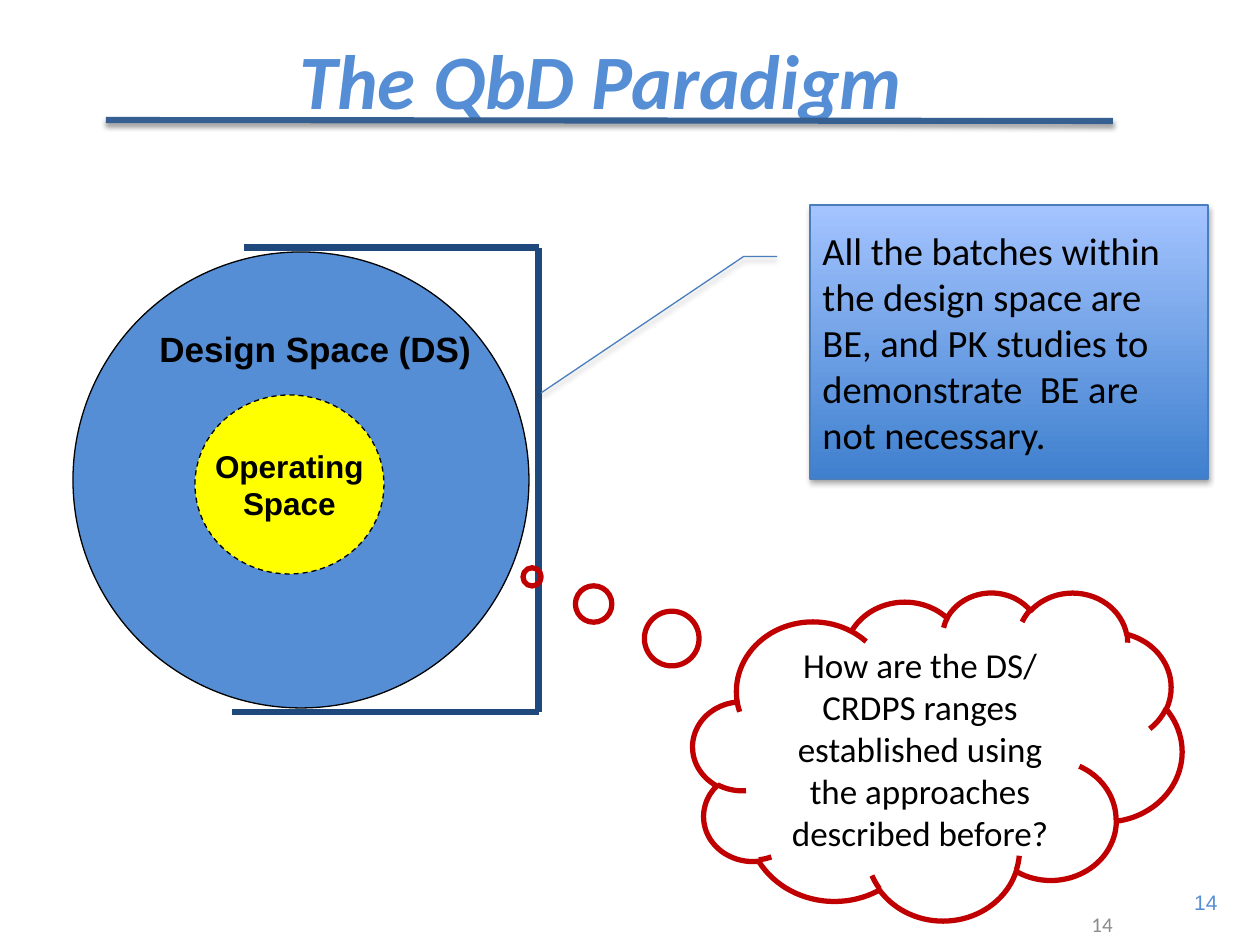
from lxml.etree import SubElement
from pptx import Presentation
from pptx.dml.color import RGBColor
from pptx.enum.dml import MSO_LINE
from pptx.enum.shapes import MSO_CONNECTOR, MSO_SHAPE
from pptx.enum.text import MSO_ANCHOR, MSO_AUTO_SIZE, PP_ALIGN
from pptx.oxml.ns import qn
from pptx.util import Emu, Pt

SCALE = 914400 / 126
COLORS = {
    "blue": "558ED5",
    "navy": "1F497D",
    "rule": "376092",
    "edge": "4B7EBC",
    "deep": "3F80CE",
    "pale": "A4C4FF",
    "yellow": "FFFF00",
    "red": "C00000",
    "black": "000000",
    "gray": "8C8C8C",
}


def px(*sizes):
    return [Emu(round(size * SCALE)) for size in sizes]


def color(name):
    return RGBColor.from_string(COLORS[name])


def set_line(item, name, width):
    item.line.color.rgb = color(name)
    item.line.width = Pt(width)


def set_shadow(item, alpha=0, blur=0, dist=0):
    props = item._element.spPr
    effects = props.find(qn("a:effectLst"))
    if effects is None:
        effects = SubElement(props, qn("a:effectLst"))
    if alpha:
        outer = SubElement(effects, qn("a:outerShdw"), blurRad=str(Pt(blur)),
                           dist=str(Pt(dist)), dir="5400000", rotWithShape="0")
        tint = SubElement(outer, qn("a:srgbClr"), val=COLORS["black"])
        SubElement(tint, qn("a:alpha"), val=str(alpha * 1000))


def set_text(shape, lines, size, face="Calibri", ink="black", align=PP_ALIGN.CENTER,
             anchor=MSO_ANCHOR.MIDDLE, wrap=True, bold=False, italic=False):
    frame = shape.text_frame
    frame.text = lines
    frame.word_wrap = wrap
    frame.vertical_anchor = anchor
    for para in frame.paragraphs:
        para.alignment = align
        font = para.font
        font.name = face
        font.size = Pt(size)
        font.bold = bold
        font.italic = italic
        font.color.rgb = color(ink)


def add_title(slide, text, box):
    title = slide.shapes.title
    title.left, title.top, title.width, title.height = px(*box)
    set_text(title, text, 44, ink="blue", bold=True, italic=True)


def add_label(slide, text, box, size, grow=False, **style):
    label = slide.shapes.add_textbox(*px(*box))
    if grow:
        label.text_frame.auto_size = MSO_AUTO_SIZE.SHAPE_TO_FIT_TEXT
        style.update(wrap=False, anchor=MSO_ANCHOR.TOP)
    set_text(label, text, size, **style)


def add_line(slide, start, end, name, width):
    line = slide.shapes.add_connector(MSO_CONNECTOR.STRAIGHT, *px(*start, *end))
    set_line(line, name, width)
    set_shadow(line)
    return line


def add_shape(slide, kind, box, edge, width, fill=None, adjust=()):
    shape = slide.shapes.add_shape(kind, *px(*box))
    shape.shadow.inherit = False
    for index, value in enumerate(adjust):
        shape.adjustments[index] = value
    if fill:
        shape.fill.solid()
        shape.fill.fore_color.rgb = color(fill)
    else:
        shape.fill.background()
    set_line(shape, edge, width)
    return shape


def add_bracket(slide):
    right, top, base = 539, 248, 712
    points = [(244, top), (right, top), (right, base), (232, base)]
    for start, end in zip(points, points[1:]):
        add_line(slide, start, end, "navy", 4)


def add_spaces(slide):
    add_shape(slide, MSO_SHAPE.OVAL, (73, 252, 456, 456), "black", 0.75, "blue")
    add_label(slide, "Design Space (DS)", (147, 321, 340, 55), 20, grow=True,
              face="Arial", align=PP_ALIGN.LEFT, bold=True)
    inner = add_shape(slide, MSO_SHAPE.OVAL, (195, 395, 189, 179), "black", 0.75, "yellow")
    inner.line.dash_style = MSO_LINE.DASH
    set_text(inner, "Operating\nSpace", 18, face="Arial", wrap=False, bold=True)


def add_cloud(slide):
    cloud = add_shape(slide, MSO_SHAPE.CLOUD_CALLOUT, (693, 592, 489, 328), "red", 3,
                      adjust=(-0.829, -0.546))
    set_text(cloud, "How are the DS/ CRDPS ranges established using "
             "the approaches described before?", 20)


def add_callout(slide):
    note = add_shape(slide, MSO_SHAPE.LINE_CALLOUT_2, (810, 205, 398, 274), "edge", 0.75,
                     adjust=(0.188, -0.083, 0.188, -0.167, 0.686, -0.676))
    note.fill.gradient()
    note.fill.gradient_angle = 90
    for stop, name in zip(note.fill.gradient_stops, ("deep", "pale")):
        stop.color.rgb = color(name)
    set_shadow(note, 35, 3.1, 1.8)
    set_text(note, "All the batches within the design space are BE, and PK studies "
             "to demonstrate  BE are not necessary.", 22, align=PP_ALIGN.LEFT)


def main():
    deck = Presentation()
    deck.slide_width, deck.slide_height = px(1260, 945)
    slide = deck.slides.add_slide(deck.slide_layouts[5])
    add_title(slide, "The QbD Paradigm", (34, 0, 1134, 158))
    add_label(slide, "14", (1178, 883, 52, 38), 12, grow=True,
              face="Arial", ink="blue", align=PP_ALIGN.RIGHT)
    add_label(slide, "14", (955, 908, 294, 32), 12, ink="gray")
    add_bracket(slide)
    add_spaces(slide)
    add_cloud(slide)
    rule = add_line(slide, (106, 120), (1113, 121), "rule", 3.5)
    set_shadow(rule, 38, 3.1, 1.6)
    add_callout(slide)
    deck.save("out.pptx")


if __name__ == "__main__":
    main()
